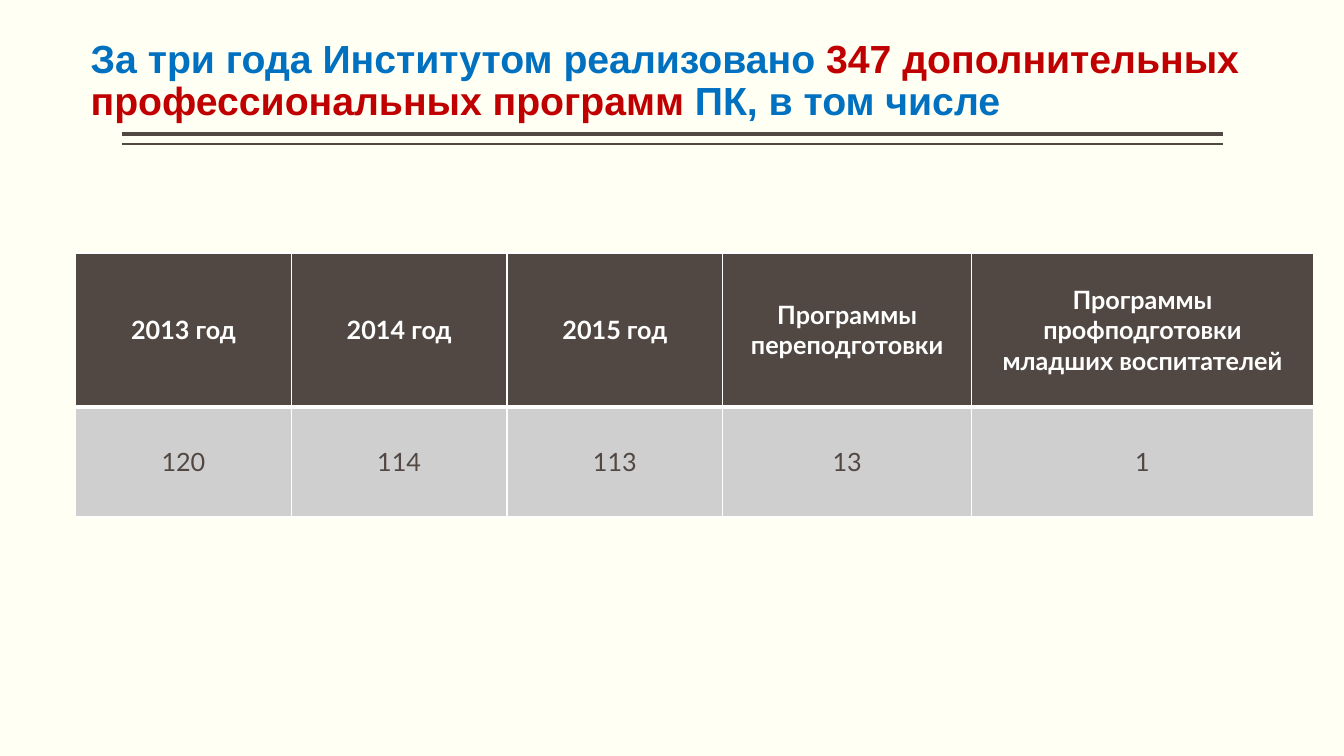
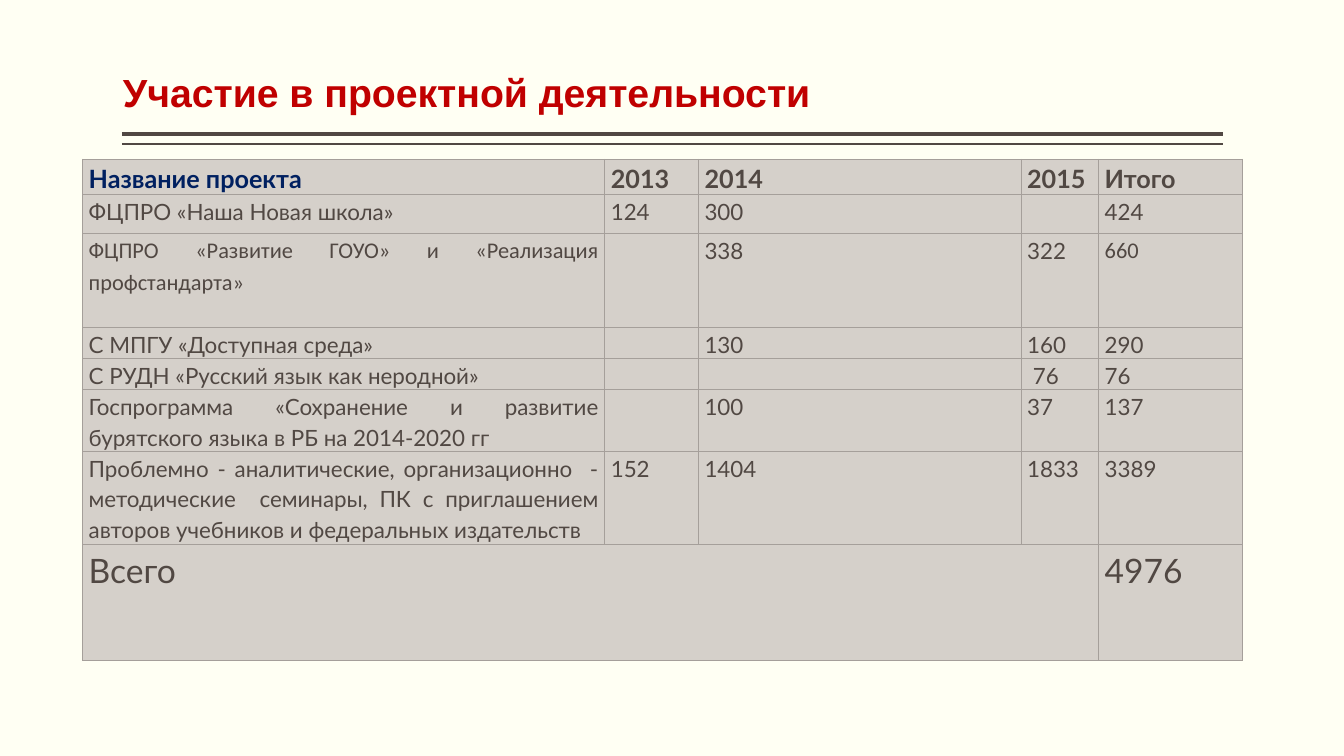
from lxml import etree
from pptx import Presentation
from pptx.dml.color import RGBColor
from pptx.enum.shapes import MSO_CONNECTOR
from pptx.enum.text import MSO_ANCHOR, PP_ALIGN
from pptx.oxml.ns import qn
from pptx.util import Pt

STRAIGHT = MSO_CONNECTOR.STRAIGHT
TOP, MIDDLE, BOTTOM = MSO_ANCHOR.TOP, MSO_ANCHOR.MIDDLE, MSO_ANCHOR.BOTTOM
LEFT, CENTER, JUSTIFY = PP_ALIGN.LEFT, PP_ALIGN.CENTER, PP_ALIGN.JUSTIFY

CREAM = RGBColor(0xFF, 0xFF, 0xF3)
WHITE = RGBColor(0xFF, 0xFF, 0xFF)
BROWN = RGBColor(0x51, 0x48, 0x43)
BLUE = RGBColor(0x00, 0x70, 0xC0)
RED = RGBColor(0xC0, 0x00, 0x00)
NAVY = RGBColor(0x00, 0x20, 0x60)
GREY = RGBColor(0xD0, 0xCF, 0xCF)
TAUPE = RGBColor(0xD5, 0xD0, 0xCA)
EDGE = RGBColor(0xA5, 0x9F, 0x9A)

TITLE_FONT, BODY_FONT, ALT_FONT = "Arial", "Lato", "Calibri"
SLIDE_W, SLIDE_H = 960, 540
RULE_LEFT, RULE_RIGHT = 87.12, 873.36
RULES = [(95.76, 3), (102.96, 1)]
TITLE_W, TITLE_H = 889.2, 86.4

PROGRAMS = [
    ["2013 год", "2014 год", "2015 год", "Программы переподготовки",
     "Программы профподготовки\nмладших воспитателей"],
    ["120", "114", "113", "13", "1"],
]
PROGRAM_COLS = [154.08, 154.08, 154.08, 177.84, 244.08]
PROGRAM_ROWS = [110.16, 78.48]

PROJECTS = [
    ["Название проекта", "2013", "2014", "2015", "Итого"],
    ["ФЦПРО «Наша Новая школа»", "124", "300", "", "424"],
    ["ФЦПРО «Развитие ГОУО» и «Реализация профстандарта»", "", "338", "322", "660"],
    ["С МПГУ «Доступная среда»", "", "130", "160", "290"],
    ["С РУДН «Русский язык как неродной»", "", "", " 76", "76"],
    ["Госпрограмма «Сохранение и развитие бурятского языка в РБ на 2014-2020 гг",
     "", "100", "37", "137"],
    ["Проблемно - аналитические, организационно  - методические  семинары, "
     "ПК с приглашением авторов учебников и федеральных издательств",
     "152", "1404", "1833", "3389"],
    ["Всего", "", "", "", "4976"],
]
PROJECT_COLS = [372.96, 66.96, 230.4, 55.44, 102.96]
PROJECT_ROWS = [25, 28, 67, 22.2, 22.2, 43.6, 66.4, 82.8]
ALT_CELLS = {(2, 0), (2, 4)}


def write(tf, paragraphs, size=18, font=BODY_FONT, color=BROWN, bold=False,
          align=LEFT, spacing=1.0):
    """Fill a text frame with paragraphs, each a string or a list of (text, color)."""
    for i, parts in enumerate(paragraphs):
        p = tf.paragraphs[0] if i == 0 else tf.add_paragraph()
        p.alignment, p.line_spacing = align, spacing
        for text, tint in [(parts, color)] if isinstance(parts, str) else parts:
            r = p.add_run()
            r.text = text
            r.font.size, r.font.name, r.font.bold = Pt(size), font, bold
            r.font.color.rgb = tint


def add_rules(s):
    """Draw the double rule under the title."""
    for y, width in RULES:
        line = s.shapes.add_connector(STRAIGHT, Pt(RULE_LEFT), Pt(y), Pt(RULE_RIGHT), Pt(y))
        line.line.color.rgb = BROWN
        line.line.width = Pt(width)
        etree.SubElement(line._element.spPr, qn("a:effectLst"))


def add_title(s, left, top, parts):
    """Place the bottom-anchored title, made of (text, color) parts."""
    sp = s.shapes.add_textbox(Pt(left), Pt(top), Pt(TITLE_W), Pt(TITLE_H))
    tf = sp.text_frame
    tf.word_wrap = True
    tf.vertical_anchor = BOTTOM
    tf.margin_left = tf.margin_right = 0
    tf.margin_top = tf.margin_bottom = Pt(3.6)
    write(tf, [parts], size=28, font=TITLE_FONT, bold=True, spacing=0.9)


def add_slide(prs, left, top, title):
    """Add a slide with the shared rules and a title."""
    s = prs.slides.add_slide(prs.slide_layouts[6])
    add_rules(s)
    add_title(s, left, top, title)
    return s


def add_grid(s, left, top, cols, rows):
    """Add an unbanded table with the given column widths and row heights."""
    frame = s.shapes.add_table(len(rows), len(cols), Pt(left), Pt(top),
                               Pt(sum(cols)), Pt(sum(rows)))
    table = frame.table
    table.first_row = table.horz_banding = False
    for column, width in zip(table.columns, cols):
        column.width = Pt(width)
    for row, height in zip(table.rows, rows):
        row.height = Pt(height)
    return table


def style_cell(cell, fill, edge, left=1, right=1, top=1, bottom=1):
    """Set the borders of a cell, by width, and then its fill."""
    tcPr = cell._tc.get_or_add_tcPr()
    for side, width in zip("LRTB", (left, right, top, bottom)):
        ln = etree.SubElement(tcPr, qn(f"a:ln{side}"), w=str(Pt(width)))
        solid = etree.SubElement(ln, qn("a:solidFill"))
        etree.SubElement(solid, qn("a:srgbClr"), val=str(edge))
    cell.fill.solid()
    cell.fill.fore_color.rgb = fill


def add_program_table(s, left, top):
    """Add the table of programme counts by year and kind."""
    table = add_grid(s, left, top, PROGRAM_COLS, PROGRAM_ROWS)
    for i, row in enumerate(PROGRAMS):
        head = i == 0
        for j, text in enumerate(row):
            cell = table.cell(i, j)
            style_cell(cell, BROWN if head else GREY, WHITE,
                       top=1 if head else 3, bottom=3 if head else 1)
            cell.vertical_anchor = MIDDLE
            write(cell.text_frame, text.split("\n"), color=WHITE if head else BROWN,
                  bold=head, align=CENTER)


def add_project_table(s, left, top):
    """Add the table of project participants with its total row."""
    table = add_grid(s, left, top, PROJECT_COLS, PROJECT_ROWS)
    last = len(PROJECTS) - 1
    table.cell(last, 0).merge(table.cell(last, 3))
    for i, row in enumerate(PROJECTS):
        size = {0: 18, last: 24}.get(i, 16)
        for j, text in enumerate(row):
            cell = table.cell(i, j)
            style_cell(cell, TAUPE, EDGE, 0.5, 0.5, 0.5, 0.5)
            cell.vertical_anchor = TOP
            cell.margin_left = cell.margin_right = Pt(4.32)
            cell.margin_top = cell.margin_bottom = 0
            if not cell.is_spanned:
                write(cell.text_frame, [text], size=size, bold=i == 0,
                      font=ALT_FONT if (i, j) in ALT_CELLS else BODY_FONT,
                      color=NAVY if i == j == 0 else BROWN, align=JUSTIFY, spacing=1.15)


def main():
    """Build and save the presentation."""
    prs = Presentation()
    prs.slide_width, prs.slide_height = Pt(SLIDE_W), Pt(SLIDE_H)
    background = prs.slide_master.background.fill
    background.solid()
    background.fore_color.rgb = CREAM

    s = add_slide(prs, 64.8, 5.76, [
        ("За три года Институтом реализовано ", BLUE),
        ("347 дополнительных профессиональных программ ", RED),
        ("ПК, в том числе", BLUE),
    ])
    add_program_table(s, 54, 180.72)

    s = add_slide(prs, 87.84, 0, [("Участие в проектной деятельности", RED)])
    add_project_table(s, 59.04, 113.76)

    prs.save("out.pptx")


if __name__ == "__main__":
    main()
